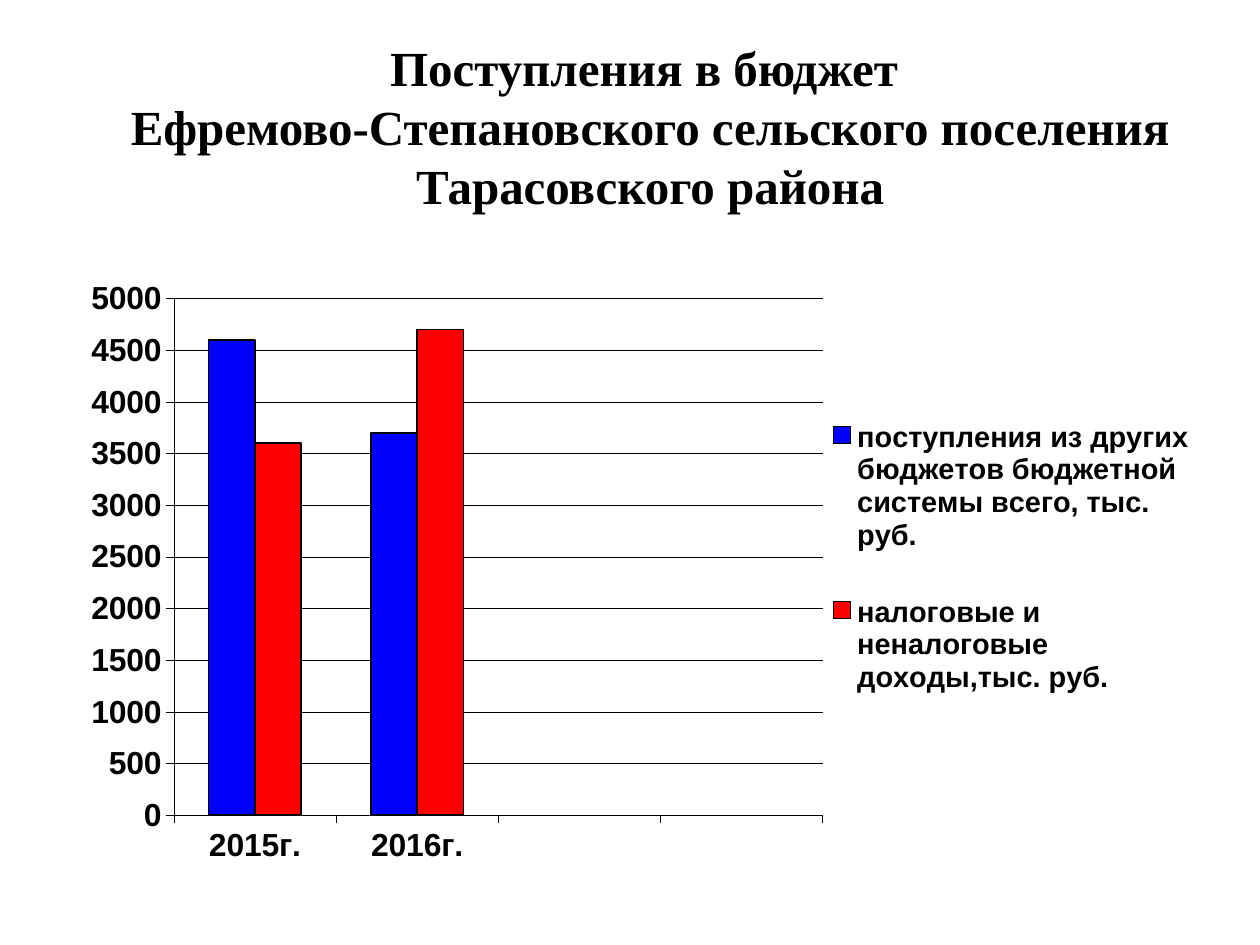
import pptx
import pptx.chart.data
import pptx.dml.color
import pptx.enum.chart
import pptx.enum.text
import pptx.oxml
import pptx.oxml.ns
import pptx.util

Inches = pptx.util.Inches
Pt = pptx.util.Pt
COLORS = {"ink": "000000", "grants": "0000FF", "taxes": "FF0000"}
LINES = [
    "Поступления в бюджет ",
    "Ефремово-Степановского сельского поселения",
    "Тарасовского района",
]
YEARS = ["2015г.", "2016г.", "", ""]
SERIES = [
    ("поступления из других бюджетов бюджетной системы всего, тыс. руб.",
     [4600, 3700, None, None], "grants"),
    ("налоговые и неналоговые доходы,тыс. руб.",
     [3600, 4700, None, None], "taxes"),
]


def rgb(name):
    return pptx.dml.color.RGBColor.from_string(COLORS[name])


def style(font, size, face="Arial", color="ink", bold=True):
    font.size = Pt(size)
    font.name = face
    font.bold = bold
    font.color.rgb = rgb(color)


def write(frame, lines, size, face, align):
    frame.text = "\n".join(lines)
    for para in frame.paragraphs:
        para.alignment = align
        style(para.runs[0].font, size, face)


def stroke(line, width):
    line.color.rgb = rgb("ink")
    line.width = Pt(width)


def arrange(part, index, box, size, inner=False):
    for old in part.findall(pptx.oxml.ns.qn("c:layout")):
        part.remove(old)
    target = '<c:layoutTarget val="inner"/>' if inner else ""
    modes = "".join(f'<c:{key}Mode val="edge"/>' for key in "xy")
    sizes = "".join(f'<c:{key} val="{num / full}"/>'
                    for key, num, full in zip("xywh", box, size * 2))
    part.insert(index, pptx.oxml.parse_xml(
        f'<c:layout {pptx.oxml.ns.nsdecls("c")}><c:manualLayout>'
        f"{target}{modes}{sizes}</c:manualLayout></c:layout>"))


def add_title(slide, left, top, width, height):
    title = slide.shapes.title
    title.left, title.top = Inches(left), Inches(top)
    title.width, title.height = Inches(width), Inches(height)
    frame = title.text_frame
    frame.word_wrap = True
    frame.auto_size = pptx.enum.text.MSO_AUTO_SIZE.NONE
    frame.vertical_anchor = pptx.enum.text.MSO_ANCHOR.TOP
    write(frame, LINES, size=28, face="Times New Roman",
          align=pptx.enum.text.PP_ALIGN.CENTER)


def add_budget(slide, left, top, width, height):
    data = pptx.chart.data.CategoryChartData()
    data.categories = YEARS
    for name, values, _ in SERIES:
        data.add_series(name, values)
    chart = slide.shapes.add_chart(
        pptx.enum.chart.XL_CHART_TYPE.COLUMN_CLUSTERED,
        Inches(left), Inches(top), Inches(width), Inches(height), data).chart
    chart.has_title = False
    style(chart.font, 18.2)

    plot = chart.plots[0]
    plot.gap_width = 150
    plot.overlap = 0
    plot.vary_by_categories = False
    for series, (_, _, color) in zip(plot.series, SERIES):
        series.format.fill.solid()
        series.format.fill.fore_color.rgb = rgb(color)
        stroke(series.format.line, 1)

    for axis in (chart.category_axis, chart.value_axis):
        style(axis.tick_labels.font, 18.2)
        axis.major_tick_mark = pptx.enum.chart.XL_TICK_MARK.OUTSIDE
        axis.minor_tick_mark = pptx.enum.chart.XL_TICK_MARK.NONE
        stroke(axis.format.line, 0.25)
    scale = chart.value_axis
    scale.minimum_scale, scale.maximum_scale, scale.major_unit = 0, 5000, 500
    scale.has_major_gridlines = True
    stroke(scale.major_gridlines.format.line, 0.25)

    chart.has_legend = True
    legend = chart.legend
    legend.position = pptx.enum.chart.XL_LEGEND_POSITION.RIGHT
    legend.include_in_layout = False
    style(legend.font, 16.5)

    size = (width, height)
    area = chart.element.find(".//" + pptx.oxml.ns.qn("c:plotArea"))
    key = chart.element.find(".//" + pptx.oxml.ns.qn("c:legend"))
    arrange(area, 0, (0.79, 0.23, 5.15, 4.1), size, inner=True)
    arrange(key, 1, (6.06, 0.85, 2.87, 2.87), size)


def main():
    deck = pptx.Presentation()
    deck.slide_width, deck.slide_height = Inches(10), Inches(7.5)
    slide = deck.slides.add_slide(deck.slide_layouts[5])
    add_title(slide, 0.66, 0.25, 9, 1.81)
    add_budget(slide, 0.59, 2.14, 8.98, 4.94)
    deck.save("out.pptx")


if __name__ == "__main__":
    main()
